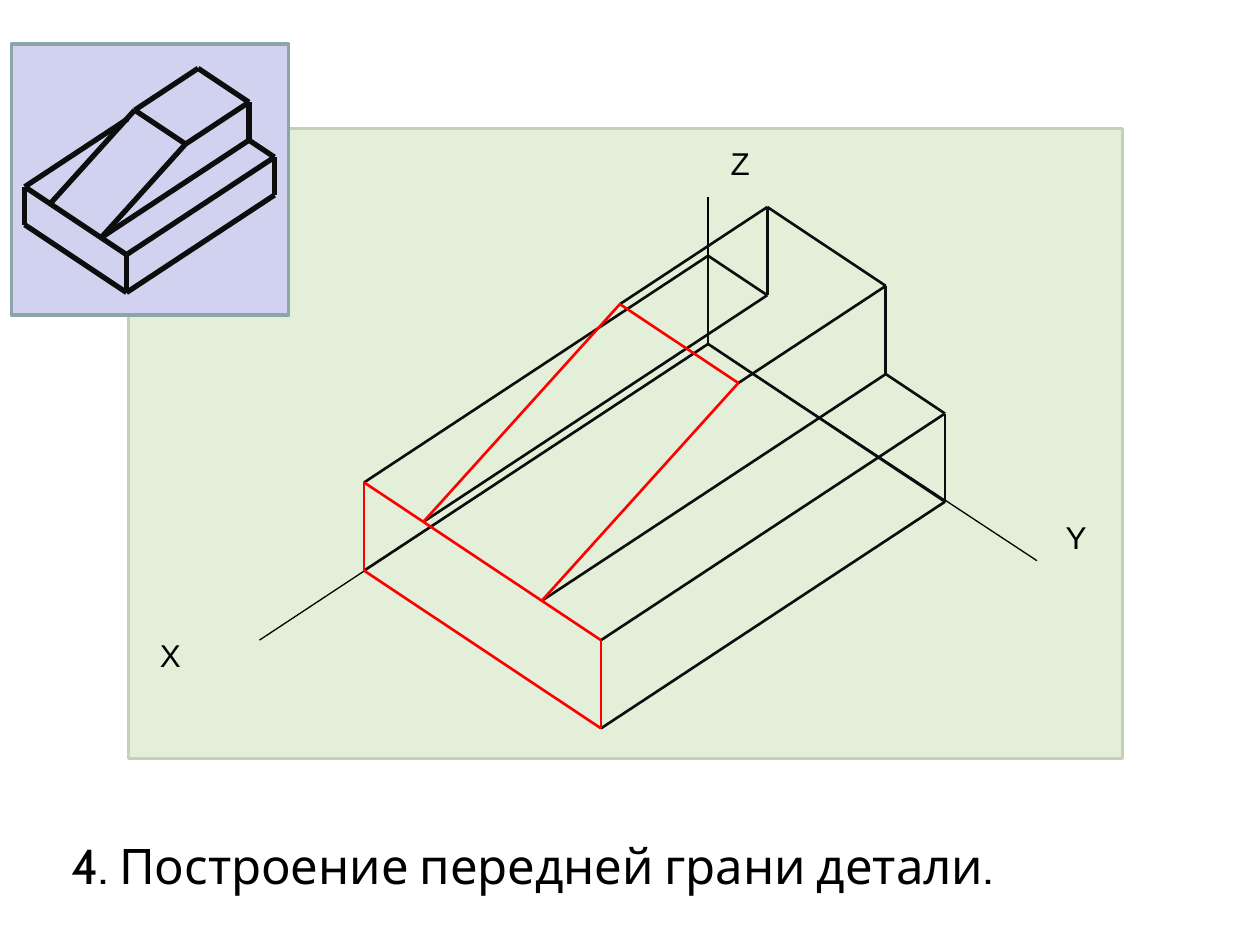
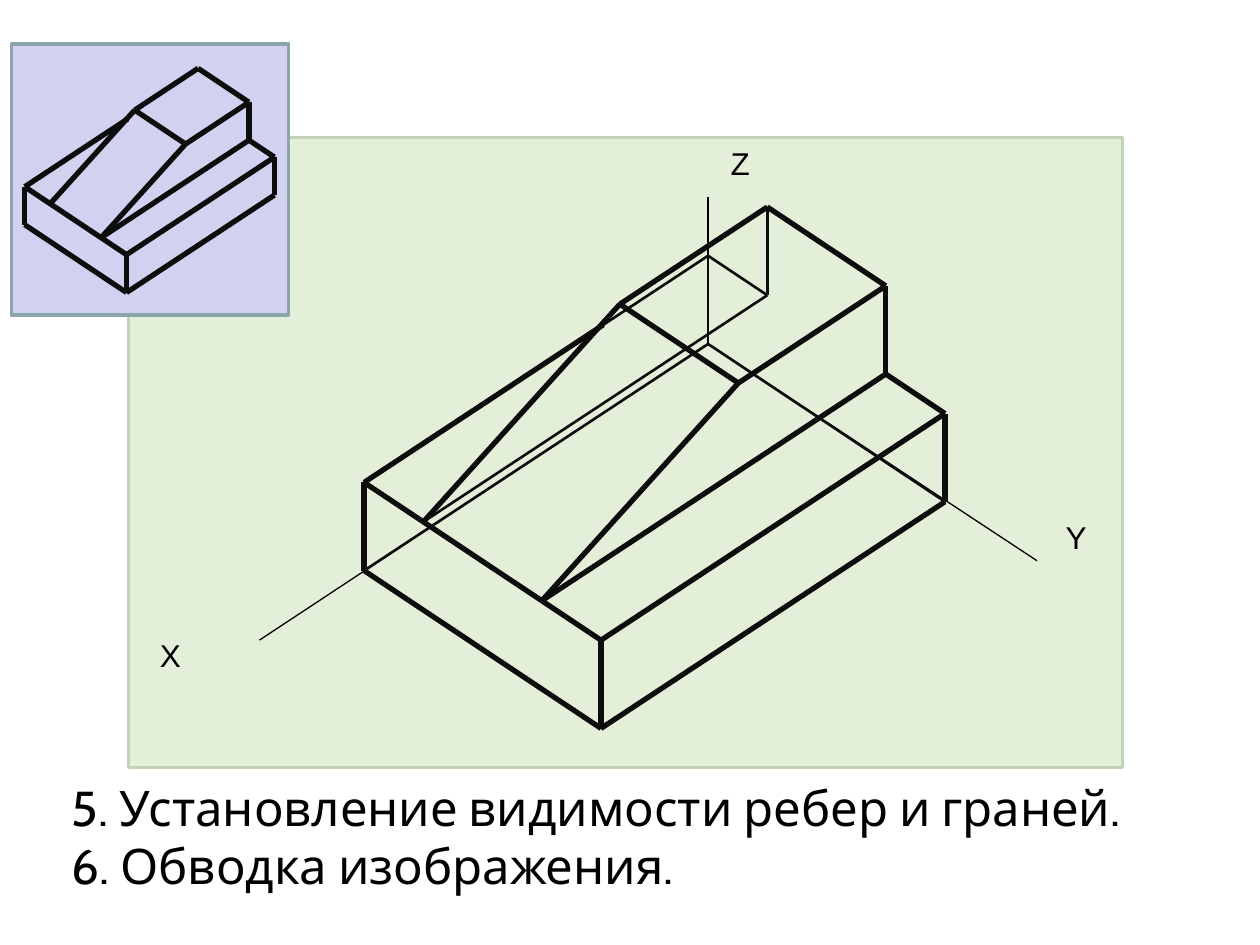
"""Build two slides on drawing a stepped part in axonometric projection."""
from lxml import etree
from pptx import Presentation
from pptx import util as u
from pptx.dml.color import RGBColor
from pptx.enum import shapes, text
from pptx.oxml.ns import qn

BLACK = RGBColor(0x00, 0x00, 0x00)
INK = RGBColor(0x0D, 0x0D, 0x0D)
RED = RGBColor(0xFF, 0x00, 0x00)
GREEN = RGBColor(0xE4, 0xEF, 0xD9)
GREEN_EDGE = RGBColor(0xC3, 0xD1, 0xB9)
LILAC = RGBColor(0xD1, 0xD1, 0xF0)
LILAC_EDGE = RGBColor(0x8A, 0xA6, 0xA8)

ORIGIN = (5.62, 2.73)
MINI_ORIGIN, MINI_SCALE = (1.37, 1.01), 0.43
AXIS_ENDS = [(5.62, 1.56), (2.06, 5.08), (8.23, 4.45)]
AXIS_LABELS = [("Z", 5.7, 1.09), ("Y", 8.36, 4.06), ("Х", 1.17, 5)]

PROFILE = [(0, 0), (4, 0), (4, 1), (3, 1), (3, 2), (1, 2), (1, 1), (0, 1)]
BACK = [(0, y, z) for y, z in PROFILE]
FRONT = [(3 if z == 2 else 7, y, z) for y, z in PROFILE]
FRONT_PAIRS = [(4, 5), (2, 7), (1, 0), (7, 0), (2, 1), (5, 6), (4, 3)]

BACK_EDGES = [(BACK[i], BACK[(i + 1) % 8]) for i in range(8)]
LONG_EDGES = list(zip(BACK, FRONT))
FRONT_EDGES = [(FRONT[i], FRONT[j]) for i, j in FRONT_PAIRS]
PART_COVERED_EDGE = ((2.13, 0, 1), FRONT[7])
VISIBLE_EDGES = BACK_EDGES[1:5] + LONG_EDGES[1:6] + [PART_COVERED_EDGE] + FRONT_EDGES


def project(point, origin, scale):
    """Turn a point of the part into a place on the slide."""
    x, y, z = point
    left = origin[0] + scale * (0.47 * y - 0.39 * x)
    top = origin[1] + scale * (0.257 * x + 0.313 * y - 0.7 * z)
    return left, top


def add_line(s, start, end, color, width):
    """Draw a straight line between two places."""
    sp = s.shapes.add_connector(shapes.MSO_CONNECTOR.STRAIGHT,
                                *map(u.Inches, (*start, *end)))
    sp.line.color.rgb = color
    sp.line.width = u.Pt(width)
    etree.SubElement(sp._element.spPr, qn("a:effectLst"))


def add_edges(s, edges, color=INK, width=1.5, origin=ORIGIN, scale=1):
    """Draw edges of the part."""
    for start, end in edges:
        add_line(s, project(start, origin, scale), project(end, origin, scale),
                 color, width)


def add_panel(s, box, fill, edge):
    """Draw a framed rectangle."""
    sp = s.shapes.add_shape(shapes.MSO_SHAPE.RECTANGLE, *map(u.Inches, box))
    sp.shadow.inherit = False
    sp.fill.solid()
    sp.fill.fore_color.rgb = fill
    sp.line.color.rgb = edge
    sp.line.width = u.Pt(2)


def add_text(s, box, lines, font, size):
    """Add a text box with one paragraph a line and return its frame."""
    tf = s.shapes.add_textbox(*map(u.Inches, box)).text_frame
    tf.text = "\n".join(lines)
    for p in tf.paragraphs:
        for r in p.runs:
            r.font.name = font
            r.font.size = u.Pt(size)
            r.font.color.rgb = BLACK
    return tf


def add_title(s, lines):
    """Add the numbered steps at the foot of the slide."""
    tf = add_text(s, (0.47, 6.41, 9, 0.86), lines, "Cabin", 28)
    tf.word_wrap = True
    tf.vertical_anchor = text.MSO_ANCHOR.BOTTOM
    tf.margin_bottom = u.Inches(0.17)
    for p in tf.paragraphs:
        p.line_spacing = u.Pt(33)


def add_axes(s):
    """Draw the three axes and their letters."""
    for end in AXIS_ENDS:
        add_line(s, ORIGIN, end, BLACK, 0.75)
    for letter, left, top in AXIS_LABELS:
        tf = add_text(s, (left, top, 0.37, 0.4), [letter], "Arial", 18)
        tf.word_wrap = False


def add_mini(s):
    """Draw the small view of the finished part."""
    add_panel(s, (0.09, 0.35, 2.2, 2.15), LILAC, LILAC_EDGE)
    add_edges(s, VISIBLE_EDGES, INK, 3, MINI_ORIGIN, MINI_SCALE)


def add_step(prs, lines, panel_top, layers):
    """Add a slide that shows one stage of the drawing."""
    s = prs.slides.add_slide(prs.slide_layouts[6])
    add_title(s, lines)
    add_panel(s, (1.02, panel_top, 7.89, 5), GREEN, GREEN_EDGE)
    add_axes(s)
    for edges, color, width in layers:
        add_edges(s, edges, color, width)
    add_mini(s)


def main():
    """Build and save the slides."""
    prs = Presentation()
    prs.slide_width, prs.slide_height = u.Inches(10), u.Inches(7.5)
    rear_edges = BACK_EDGES + LONG_EDGES
    add_step(prs, ["4. Построение передней грани детали."], 1.02,
             [(rear_edges, INK, 1.5), (FRONT_EDGES, RED, 1.5)])
    add_step(prs, ["5. Установление видимости ребер и граней.",
                   "6. Обводка изображения."], 1.09,
             [(rear_edges + FRONT_EDGES, INK, 1.5), (VISIBLE_EDGES, INK, 3)])
    prs.save("out.pptx")


if __name__ == "__main__":
    main()
